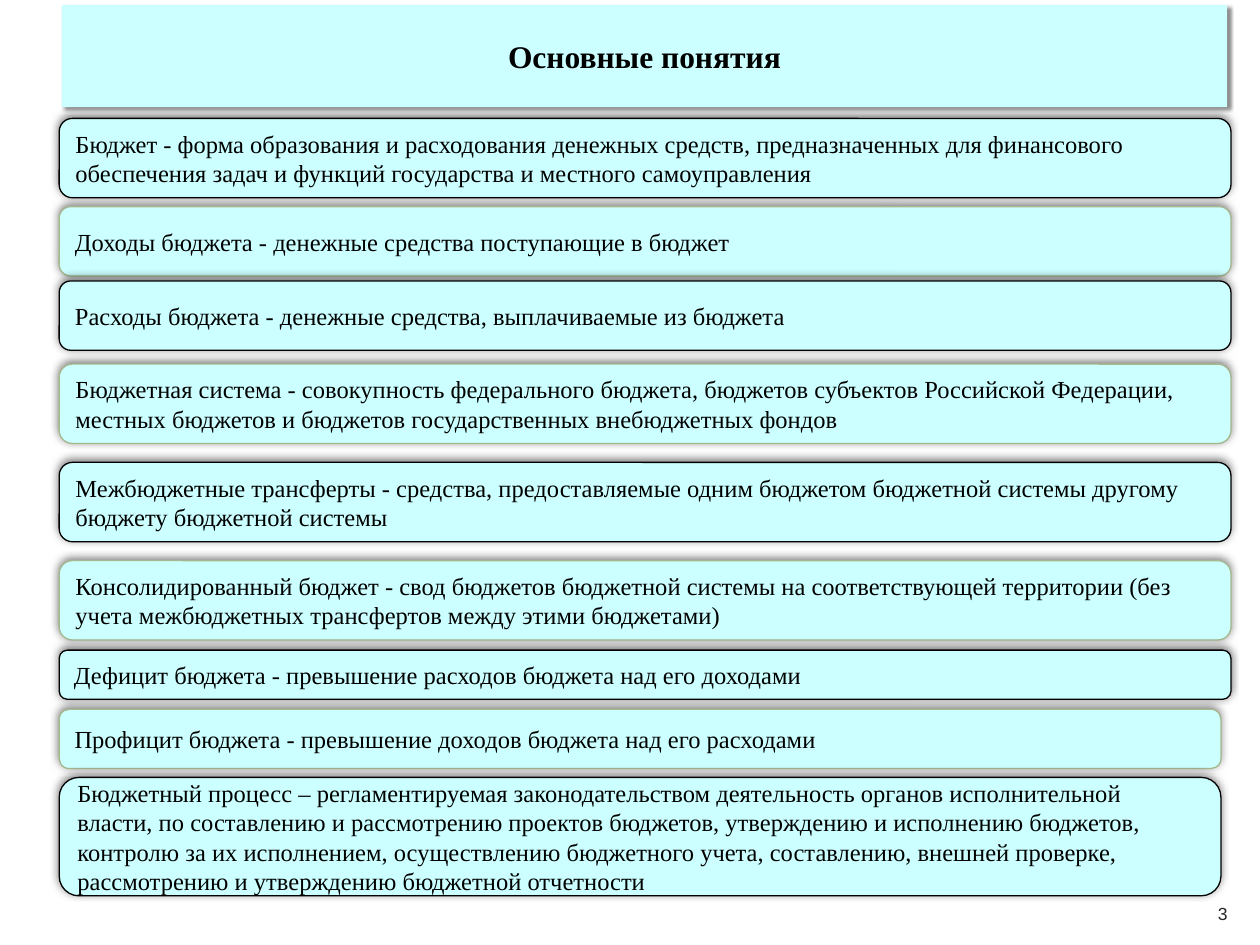
"""Build the slide that defines the basic budget terms."""
from lxml import etree
from pptx import Presentation
from pptx.dml.color import RGBColor
from pptx.enum import shapes, text
from pptx.oxml import ns
from pptx.util import Inches, Pt

AQUA = RGBColor(0xCC, 0xFF, 0xFF)
BLACK = RGBColor(0, 0, 0)
SAGE = RGBColor(0xA5, 0xB8, 0x8E)
GRAPHITE = RGBColor(0x26, 0x26, 0x26)
SHADOW_GREY = RGBColor(0x59, 0x59, 0x59)


def write(shape, wording, size=14, font="Times New Roman", color=BLACK,
          bold=False, align=text.PP_ALIGN.LEFT):
    frame = shape.text_frame
    frame.word_wrap = True
    frame.auto_size = text.MSO_AUTO_SIZE.NONE
    frame.vertical_anchor = text.MSO_ANCHOR.MIDDLE
    paragraph = frame.paragraphs[0]
    paragraph.alignment = align
    run = paragraph.add_run()
    run.text = wording
    run.font.size = Pt(size)
    run.font.name = font
    run.font.bold = bold
    run.font.color.rgb = color


def cast_shadow(shape, color, opacity, blur, distance, angle):
    shape.shadow.inherit = False
    effects = shape._element.spPr.find(ns.qn("a:effectLst"))
    shadow = etree.SubElement(
        effects, ns.qn("a:outerShdw"), blurRad=str(Pt(blur)),
        dist=str(Pt(distance)), dir=str(angle * 60000), rotWithShape="0")
    tint = etree.SubElement(shadow, ns.qn("a:srgbClr"), val=str(color))
    etree.SubElement(tint, ns.qn("a:alpha"), val=str(opacity * 1000))


presentation = Presentation()
presentation.slide_width = Inches(10)
presentation.slide_height = Inches(7.5)
slide = presentation.slides.add_slide(presentation.slide_layouts[5])

heading = slide.shapes.title
heading.left, heading.top = Inches(0.49), Inches(0.04)
heading.width, heading.height = Inches(9.25), Inches(0.81)
heading.fill.solid()
heading.fill.fore_color.rgb = AQUA
cast_shadow(heading, SHADOW_GREY, opacity=71, blur=2, distance=2, angle=40)
write(heading, "Основные понятия", size=18, bold=True, align=text.PP_ALIGN.CENTER)

page_number = slide.shapes.add_textbox(Inches(9.45), Inches(7.05), Inches(0.51), Inches(0.4))
write(page_number, "3", size=10, font="Arial", color=GRAPHITE, align=text.PP_ALIGN.CENTER)

definitions = [
    (0.94, 9.3, 0.63, "Бюджет - форма образования и расходования денежных средств, "
     "предназначенных для финансового обеспечения задач и функций государства "
     "и местного самоуправления"),
    (1.64, 9.3, 0.55, "Доходы бюджета - денежные средства поступающие в бюджет"),
    (2.23, 9.3, 0.55, "Расходы бюджета - денежные средства, выплачиваемые из бюджета"),
    (2.89, 9.3, 0.63, "Бюджетная система - совокупность федерального бюджета, бюджетов "
     "субъектов Российской Федерации, местных бюджетов и бюджетов "
     "государственных внебюджетных фондов"),
    (3.67, 9.3, 0.63, "Межбюджетные трансферты - средства, предоставляемые одним бюджетом "
     "бюджетной системы другому бюджету бюджетной системы"),
    (4.45, 9.3, 0.63, "Консолидированный бюджет - свод бюджетов бюджетной системы на "
     "соответствующей территории (без учета межбюджетных трансфертов "
     "между этими бюджетами)"),
    (5.16, 9.3, 0.39, "Дефицит бюджета - превышение расходов бюджета над его доходами"),
    (5.63, 9.22, 0.47, "Профицит бюджета - превышение доходов бюджета над его расходами"),
    (6.17, 9.22, 0.94, "Бюджетный процесс – регламентируемая законодательством деятельность "
     "органов исполнительной власти, по составлению и рассмотрению проектов "
     "бюджетов, утверждению и исполнению бюджетов, контролю за их исполнением, "
     "осуществлению бюджетного учета, составлению, внешней проверке, "
     "рассмотрению и утверждению бюджетной отчетности"),
]
for index, (top, width, height, definition) in enumerate(definitions):
    panel = slide.shapes.add_shape(
        shapes.MSO_SHAPE.ROUNDED_RECTANGLE,
        Inches(0.47), Inches(top), Inches(width), Inches(height))
    panel.fill.solid()
    panel.fill.fore_color.rgb = AQUA
    panel.line.color.rgb = SAGE if index % 2 else BLACK
    panel.line.width = Pt(0.75)
    cast_shadow(panel, BLACK, opacity=50, blur=5, distance=2, angle=245)
    write(panel, definition)

presentation.save("out.pptx")
